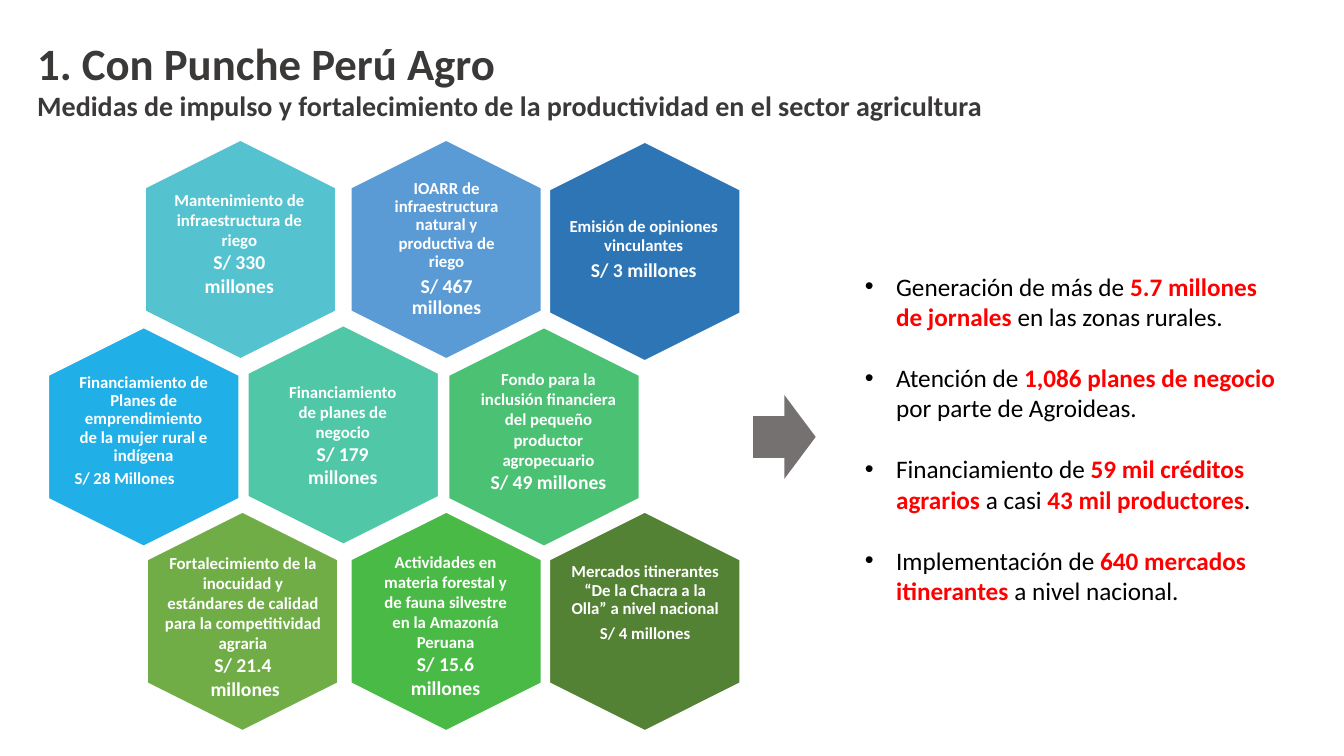
from lxml import etree
from pptx import Presentation
from pptx.dml.color import RGBColor
from pptx.enum.shapes import MSO_SHAPE
from pptx.enum.text import MSO_ANCHOR, PP_ALIGN
from pptx.oxml.ns import qn
from pptx.util import Pt

HEXAGON = MSO_SHAPE.HEXAGON
RIGHT_ARROW = MSO_SHAPE.RIGHT_ARROW
TOP, MIDDLE = MSO_ANCHOR.TOP, MSO_ANCHOR.MIDDLE
LEFT, CENTER, JUSTIFY = PP_ALIGN.LEFT, PP_ALIGN.CENTER, PP_ALIGN.JUSTIFY

EMU_PER_PX = 9144
FONT = "Calibri"
COLORS = {
    "heading": "3B3838",
    "body": "000000",
    "accent": "FF0000",
    "white": "FFFFFF",
    "arrow": "767171",
    "turquoise": "55C3CF",
    "blue": "5B9BD5",
    "navy": "2E75B6",
    "sky": "20AFE6",
    "mint": "50C8A7",
    "emerald": "4BC174",
    "olive": "70AD47",
    "green": "4ABA46",
    "forest": "548235",
}

HEXAGON_SIZE = (217, 189)
CENTERED = {"anchor": MIDDLE, "inset": 5}
COMPACT = {"line_spacing": 0.9, "space_after": 4}
MEASURES = [
    ((130, 153), "turquoise", (161, 183, 153, 118),
     "Mantenimiento de infraestructura de riego",
     ["S/ 330", "millones"], {}, {}),
    ((334, 153), "blue", (378, 173, 130, 149),
     "IOARR de infraestructura natural y productiva de riego",
     ["S/ 467 millones"], CENTERED, COMPACT),
    ((531, 155), "navy", (540, 183, 197, 130),
     "Emisión de opiniones vinculantes",
     ["S/ 3 millones"], CENTERED, COMPACT),
    ((34, 339), "sky", (69, 363, 147, 130),
     "Financiamiento de Planes de emprendimiento de la mujer rural e indígena",
     ["S/ 28 Millones"], CENTERED,
     {**COMPACT, "amount_size": 12, "amount_align": LEFT}),
    ((232, 337), "mint", (275, 357, 130, 149),
     "Financiamiento de planes de negocio",
     ["S/ 179 millones"], CENTERED, {}),
    ((431, 339), "emerald", (455, 361, 178, 135),
     "Fondo para la inclusión financiera del pequeño productor agropecuario",
     ["S/ 49 millones"], {}, {}),
    ((132, 522), "olive", (152, 543, 178, 158),
     "Fortalecimiento de la inocuidad y estándares de calidad "
     "para la competitividad agraria",
     ["S/ 21.4", " millones"], {}, {}),
    ((334, 522), "green", (370, 542, 144, 158),
     "Actividades en materia forestal y de fauna silvestre en la Amazonía Peruana",
     ["S/ 15.6 millones"], {}, {}),
    ((531, 522), "forest", (552, 554, 176, 120),
     "Mercados itinerantes “De la Chacra a la Olla” a nivel nacional",
     ["S/ 4 millones"], {},
     {"line_spacing": 0.9, "space_after": 5, "amount_size": 12}),
]

RESULTS = [
    [("Generación de más de ", False), ("5.7 millones de jornales", True),
     (" en las zonas rurales.", False)],
    [("Atención de ", False), ("1,086 planes de negocio ", True),
     ("por parte de Agroideas.", False)],
    [("Financiamiento de ", False), ("59 mil créditos agrarios ", True),
     ("a casi ", False), ("43 mil productores", True), (".", False)],
    [("Implementación de ", False), ("640 mercados itinerantes", True),
     (" a nivel nacional.", False)],
]


def px(value):
    return value * EMU_PER_PX


def rgb(name):
    return RGBColor.from_string(COLORS[name])


def add_run(paragraph, text, size=12, color="white", bold=True):
    run = paragraph.add_run()
    run.text = text
    run.font.name = FONT
    run.font.size = Pt(size)
    run.font.bold = bold
    run.font.color.rgb = rgb(color)


class SlideBuilder:
    def __init__(self, slide):
        self.slide = slide

    def shape(self, kind, box, fill, outline=None, rotation=0):
        shape = self.slide.shapes.add_shape(kind, *map(px, box))
        shape.shadow.inherit = False
        shape.rotation = rotation
        shape.fill.solid()
        shape.fill.fore_color.rgb = rgb(fill)
        if outline:
            shape.line.color.rgb = rgb(outline)
            shape.line.width = Pt(1)
        else:
            shape.line.fill.background()

    def text_frame(self, box, anchor=TOP, inset=10):
        frame = self.slide.shapes.add_textbox(*map(px, box)).text_frame
        frame.word_wrap = True
        frame.vertical_anchor = anchor
        frame.margin_left = frame.margin_right = px(inset)
        frame.margin_top = frame.margin_bottom = px(5)
        return frame

    def paragraph(self, frame, first, align=LEFT, line_spacing=None, space_after=None):
        paragraph = frame.paragraphs[0] if first else frame.add_paragraph()
        paragraph.alignment = align
        if line_spacing:
            paragraph.line_spacing = line_spacing
        if space_after:
            paragraph.space_after = Pt(space_after)
        return paragraph

    def heading(self, box, title, subtitle):
        frame = self.text_frame(box)
        for text, size in ((title, 32), (subtitle, 20)):
            paragraph = self.paragraph(frame, text == title, JUSTIFY)
            add_run(paragraph, text, size=size, color="heading")

    def measure(self, corner, color, box, title, amounts, frame_style, text_style):
        self.shape(HEXAGON, corner + HEXAGON_SIZE, color, "white", 90)
        style = dict(text_style)
        amount_size = style.pop("amount_size", 14)
        amount_align = style.pop("amount_align", CENTER)
        frame = self.text_frame(box, **frame_style)
        add_run(self.paragraph(frame, True, CENTER, **style), title)
        for amount in amounts:
            paragraph = self.paragraph(frame, False, amount_align, **style)
            add_run(paragraph, amount, size=amount_size)

    def bullets(self, box, items):
        frame = self.text_frame(box)
        for index, runs in enumerate(items):
            paragraph = self.paragraph(frame, index == 0)
            if index:
                paragraph.space_before = Pt(22)
            properties = paragraph._p.get_or_add_pPr()
            properties.set("marL", str(px(31)))
            properties.set("indent", str(-px(31)))
            etree.SubElement(properties, qn("a:buFont")).set("typeface", "Arial")
            etree.SubElement(properties, qn("a:buChar")).set("char", "•")
            for text, highlighted in runs:
                color = "accent" if highlighted else "body"
                add_run(paragraph, text, size=18, color=color, bold=highlighted)


def main():
    presentation = Presentation()
    presentation.slide_width = px(1333)
    presentation.slide_height = px(750)
    slide = presentation.slides.add_slide(presentation.slide_layouts[6])
    builder = SlideBuilder(slide)
    builder.heading(
        (27, 30, 1271, 98),
        "1. Con Punche Perú Agro",
        "Medidas de impulso y fortalecimiento de la productividad en el sector agricultura",
    )
    for measure in MEASURES:
        builder.measure(*measure)
    builder.shape(RIGHT_ARROW, (747, 392, 62, 83), "arrow")
    builder.bullets((848, 264, 433, 343), RESULTS)
    presentation.save("out.pptx")


if __name__ == "__main__":
    main()
